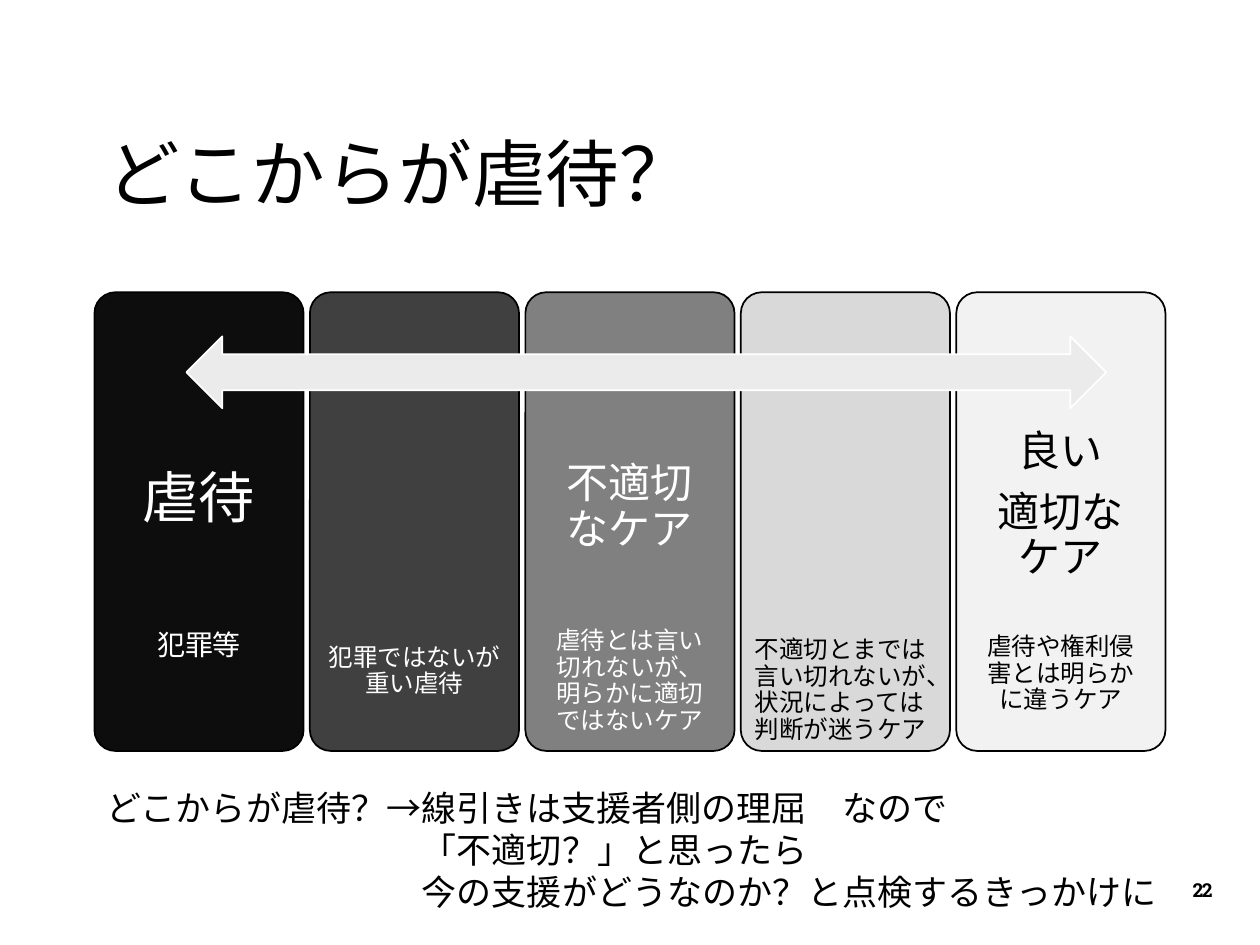
import pptx
import pptx.util
import pptx.dml.color
import pptx.enum.shapes
import pptx.enum.text

Inches, Pt = pptx.util.Inches, pptx.util.Pt
RGBColor = pptx.dml.color.RGBColor
SHAPE = pptx.enum.shapes.MSO_SHAPE
ALIGN = pptx.enum.text.PP_ALIGN
ANCHOR = pptx.enum.text.MSO_ANCHOR

BLACK = RGBColor(0x00, 0x00, 0x00)
WHITE = RGBColor(0xFF, 0xFF, 0xFF)
INK = RGBColor(0x0D, 0x0D, 0x0D)
DARK = RGBColor(0x40, 0x40, 0x40)
GREY = RGBColor(0x80, 0x80, 0x80)
LIGHT = RGBColor(0xD9, 0xD9, 0xD9)
PALE = RGBColor(0xF2, 0xF2, 0xF2)
ARROW = RGBColor(0xEB, 0xEB, 0xEB)
SLAB = "Roboto Slab"

# Each line of a card: text, size, space before
CARDS = [
    (INK, WHITE, 4.49, 0.25, ALIGN.CENTER,
     [("虐待", 32, 0), ("犯罪等", 16, 58)]),
    (DARK, WHITE, 5.33, 0.11, ALIGN.CENTER,
     [("犯罪ではないが重い虐待", 14, 0)]),
    (GREY, WHITE, 4.75, 0.19, ALIGN.CENTER,
     [("不適切なケア", 24, 0),
      ("虐待とは言い切れないが、明らかに適切ではないケア", 14, 43)]),
    (LIGHT, BLACK, 5.48, 0.11, ALIGN.LEFT,
     [("不適切とまでは言い切れないが、状況によっては判断が迷うケア", 14, 0)]),
    (PALE, BLACK, 4.54, 0.19, ALIGN.CENTER,
     [("良い", 24, 0), ("適切なケア", 24, 9),
      ("虐待や権利侵害とは明らかに違うケア", 14, 30)]),
]
NOTES = [
    ("どこからが虐待？→線引きは支援者側の理屈　なので", 0),
    ("「不適切？」と思ったら", 2.5),
    ("今の支援がどうなのか？と点検するきっかけに", 2.5),
]


def add_box(slide, left, top, width, height, anchor=ANCHOR.MIDDLE):
    """Add a wrapping text box and return its text frame."""
    box = slide.shapes.add_textbox(
        Inches(left), Inches(top), Inches(width), Inches(height))
    frame = box.text_frame
    frame.word_wrap = True
    frame.vertical_anchor = anchor
    return frame


def add_line(frame, first, text, size, color, face=SLAB, align=ALIGN.LEFT):
    """Add a paragraph with one run and return both."""
    para = frame.paragraphs[0] if first else frame.add_paragraph()
    para.alignment = align
    run = para.add_run()
    run.text = text
    run.font.size = Pt(size)
    run.font.name = face
    run.font.color.rgb = color
    return para, run


def add_shape(slide, kind, left, top, width, height, fill, line):
    """Add a flat preset shape with a thin outline."""
    shape = slide.shapes.add_shape(
        kind, Inches(left), Inches(top), Inches(width), Inches(height))
    shape.shadow.inherit = False
    shape.fill.solid()
    shape.fill.fore_color.rgb = fill
    shape.line.color.rgb = line
    shape.line.width = Pt(1)
    return shape


def add_title(slide, left, top, width, height):
    """Place the slide title."""
    frame = add_box(slide, left, top, width, height)
    para, _ = add_line(frame, True, "どこからが虐待？", 42, BLACK, "Arial")
    para.line_spacing = 0.9


def add_card(slide, left, top, width, height, card):
    """Place one card with its text centred on the given height."""
    fill, color, middle, inset, align, lines = card
    shape = add_shape(slide, SHAPE.ROUNDED_RECTANGLE,
                      left, top, width, height, fill, BLACK)
    shape.adjustments[0] = 0.1
    half = top + height - middle
    frame = add_box(slide, left, middle - half, width, 2 * half)
    frame.margin_left = frame.margin_right = Inches(inset)
    frame.margin_top = frame.margin_bottom = 0
    for i, (text, size, gap) in enumerate(lines):
        para, _ = add_line(frame, i == 0, text, size, color, align=align)
        para.line_spacing = 0.9
        if gap:
            para.space_before = Pt(gap)


def add_scale(slide, left, top, width, height):
    """Place the row of cards and the arrow across it."""
    wide, pitch = 1.66, (width - 1.66) / (len(CARDS) - 1)
    for i, card in enumerate(CARDS):
        add_card(slide, left + i * pitch, top, wide, height, card)
    add_shape(slide, SHAPE.LEFT_RIGHT_ARROW, left + 0.73, top + 0.35,
              width - 1.2, 0.57, ARROW, WHITE)


def add_notes(slide, left, top, width, height):
    """Place the closing lines, the later ones indented."""
    frame = add_box(slide, left, top, width, height, ANCHOR.TOP)
    for i, (text, indent) in enumerate(NOTES):
        para, _ = add_line(frame, i == 0, text, 20, BLACK)
        if indent:
            para._p.get_or_add_pPr().set("marL", str(Inches(indent)))


def add_number(slide, left, top, width, height):
    """Place the page number."""
    frame = add_box(slide, left, top, width, height)
    _, run = add_line(frame, True, "22", 11, BLACK, align=ALIGN.CENTER)
    run.font.bold = True
    run._r.get_or_add_rPr().set("spc", "-70")


def main():
    """Build the slide and save it."""
    deck = pptx.Presentation()
    deck.slide_width, deck.slide_height = Inches(10), Inches(7.5)
    slide = deck.slides.add_slide(deck.slide_layouts[6])
    add_title(slide, 0.75, 0.53, 8.5, 1.76)
    add_scale(slide, 0.75, 2.32, 8.5, 3.64)
    add_number(slide, 9.28, 6.86, 0.53, 0.4)
    add_notes(slide, 0.75, 6.19, 8.74, 1.11)
    deck.save("out.pptx")


if __name__ == "__main__":
    main()
